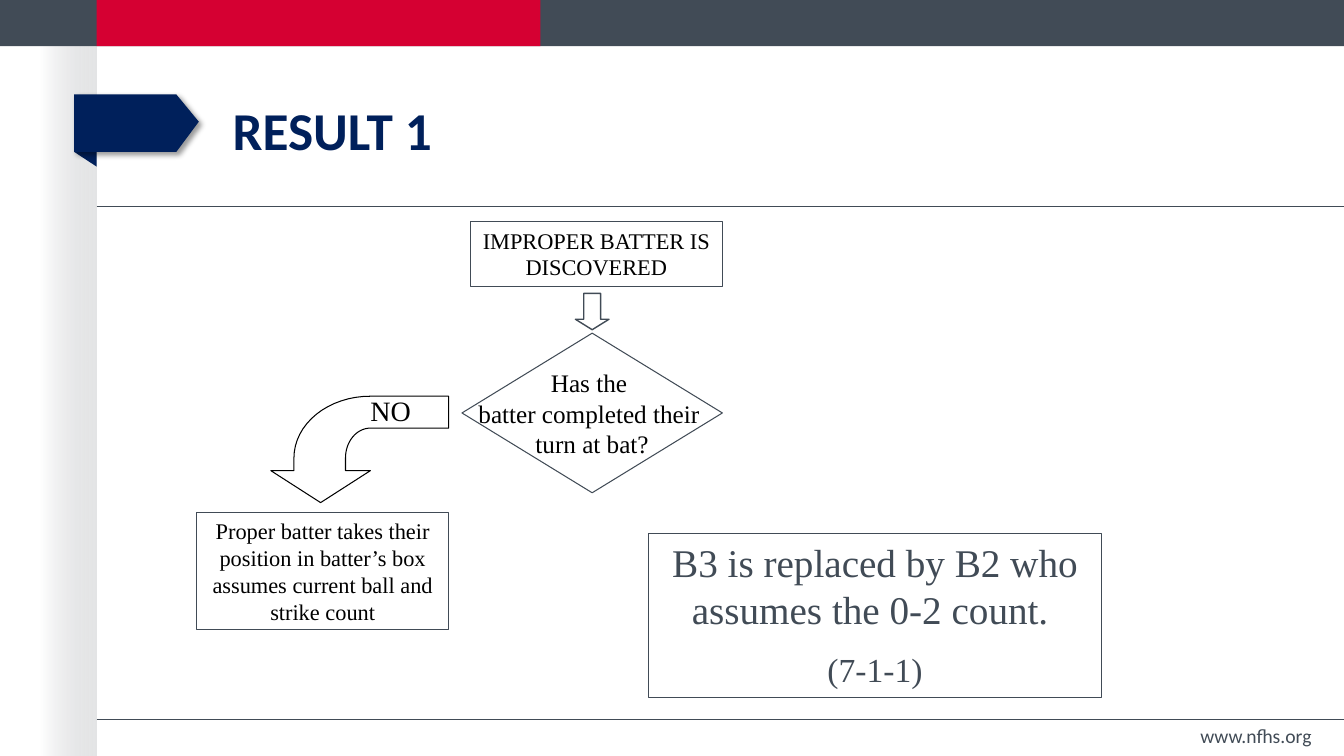
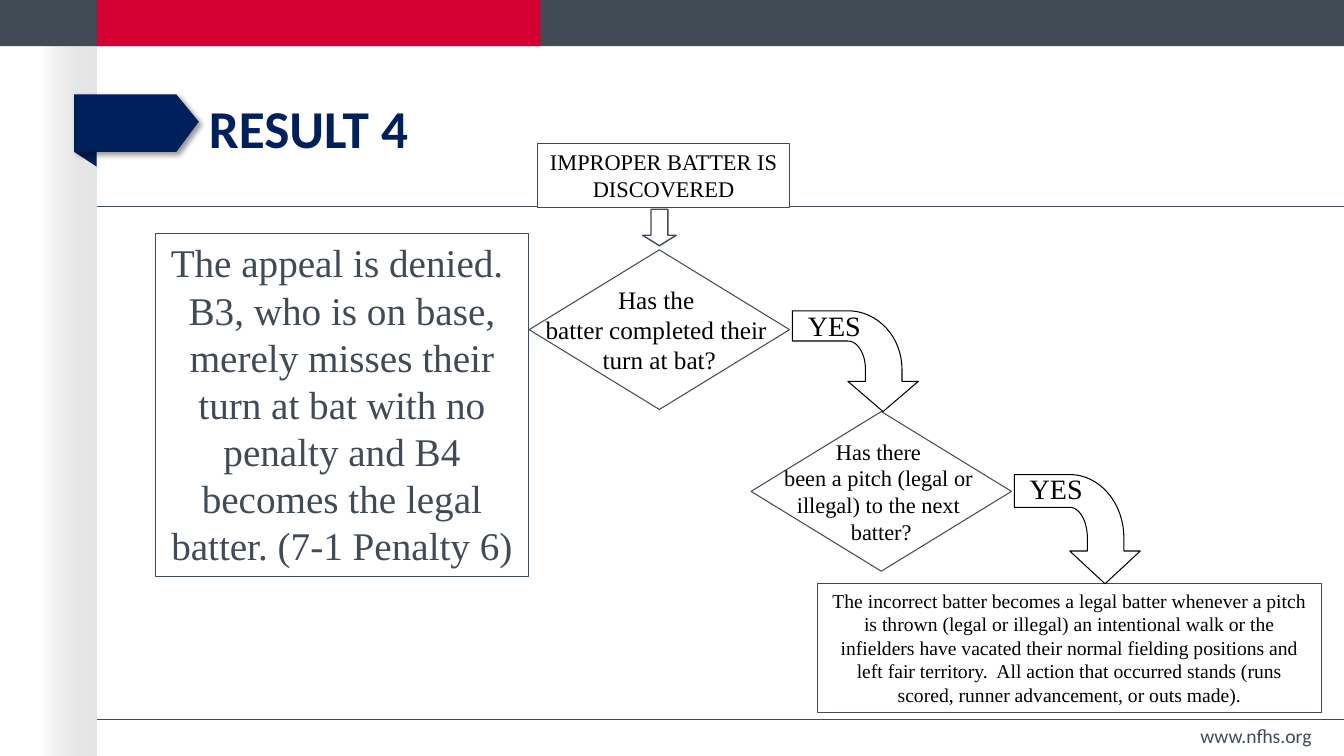
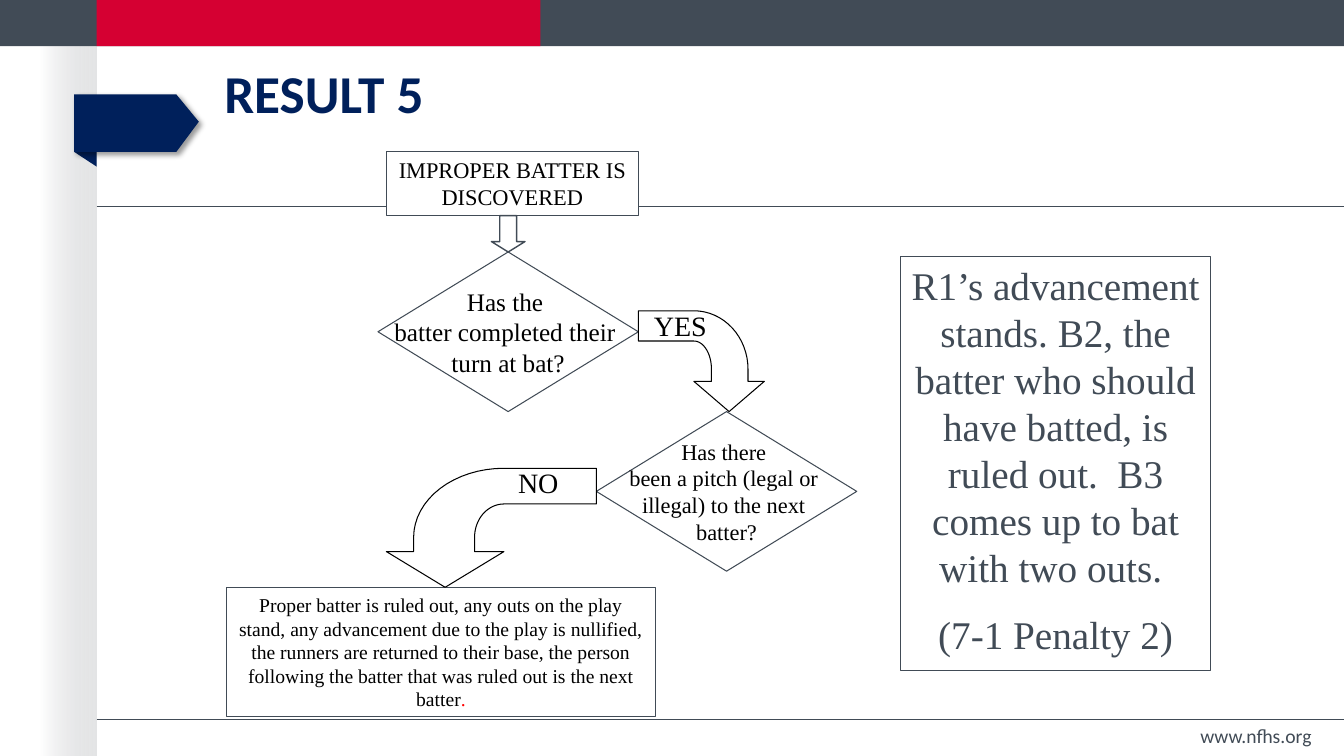
"""Build three slides that walk through batting-out-of-order results."""
import dataclasses
import math

import lxml.etree
import pptx
import pptx.dml.color
import pptx.enum.dml
import pptx.enum.shapes
import pptx.enum.text
import pptx.oxml.ns
import pptx.util

Pt = pptx.util.Pt
qn = pptx.oxml.ns.qn
RGB = pptx.dml.color.RGBColor.from_string
Preset = pptx.enum.shapes.MSO_SHAPE
Align = pptx.enum.text.PP_ALIGN
Anchor = pptx.enum.text.MSO_ANCHOR


@dataclasses.dataclass(frozen=True)
class Theme:
    slate: str = "414B56"
    red: str = "D50032"
    navy: str = "00205B"
    white: str = "FFFFFF"
    black: str = "000000"
    alert: str = "FF0000"
    fade: tuple = ("C8C9CC", "E4E5E6")
    heading_font: str = "Calibri"
    body_font: str = "Times New Roman"
    title: int = 38
    ruling: int = 28
    citation: int = 24
    answer: int = 20
    question: int = 18
    step: int = 16
    detail: int = 14


THEME = Theme()


def lines(size, color, *texts):
    return [[(text, size, color)] for text in texts]


class Deck:
    def __init__(self, theme):
        self.theme = theme
        self.presentation = pptx.Presentation()
        self.presentation.slide_width = Pt(960)
        self.presentation.slide_height = Pt(540)
        self.layout = self.presentation.slide_layouts[5]
        self.slide = None

    def paint(self, shape, fill=None, line=None, width=0.75):
        shape.shadow.inherit = False
        if fill:
            shape.fill.solid()
            shape.fill.fore_color.rgb = RGB(fill)
        if line:
            shape.line.color.rgb = RGB(line)
            shape.line.width = Pt(width)
        else:
            shape.line.fill.background()
        return shape

    def set_text(self, shape, paragraphs, align=Align.CENTER, anchor=Anchor.TOP,
                 wrap=True, font=None, bold=False):
        frame = shape.text_frame
        frame.auto_size = pptx.enum.text.MSO_AUTO_SIZE.NONE
        frame.word_wrap = wrap
        frame.vertical_anchor = anchor
        for index, runs in enumerate(paragraphs):
            paragraph = frame.add_paragraph() if index else frame.paragraphs[0]
            paragraph.alignment = align
            for text, size, color in runs:
                run = paragraph.add_run()
                run.text = text
                run.font.name = font or self.theme.body_font
                run.font.size = Pt(size)
                run.font.bold = bold
                run.font.color.rgb = RGB(color)
        return frame

    def preset(self, kind, left, top, width, height, fill=None, line=None, weight=0.75):
        shape = self.slide.shapes.add_shape(kind, Pt(left), Pt(top), Pt(width), Pt(height))
        return self.paint(shape, fill, line, weight)

    def outline(self, points, fill, line=None):
        start, *rest = [(Pt(x), Pt(y)) for x, y in points]
        builder = self.slide.shapes.build_freeform(*start, scale=1.0)
        builder.add_line_segments(rest, close=True)
        return self.paint(builder.convert_to_shape(), fill, line)

    def rule(self, top):
        connector = self.slide.shapes.add_connector(
            pptx.enum.shapes.MSO_CONNECTOR.STRAIGHT, Pt(69), Pt(top), Pt(960), Pt(top))
        connector.line.color.rgb = RGB(self.theme.slate)
        connector.line.width = Pt(1)
        lxml.etree.SubElement(connector.element.spPr, qn("a:effectLst"))

    def side_fade(self):
        strip = self.preset(Preset.RECTANGLE, 29, 33, 40, 507)
        strip.fill.gradient()
        strip.fill.gradient_angle = 0
        for stop, color in zip(strip.fill.gradient_stops, self.theme.fade):
            stop.color.rgb = RGB(color)
        clear = next(strip.element.iter(qn("a:srgbClr")))
        lxml.etree.SubElement(clear, qn("a:alpha"), val="0")

    def ribbon(self):
        self.outline([(53, 108.5), (69, 108.5), (69, 119)], self.theme.navy)
        tab = self.outline([(53, 67.5), (126, 67.5), (142, 87), (126, 108.5), (53, 108.5)],
                           self.theme.navy)
        effects = tab.element.spPr.find(qn("a:effectLst"))
        shadow = lxml.etree.SubElement(
            effects, qn("a:outerShdw"), blurRad=str(Pt(4)), dist=str(Pt(3)),
            dir="2700000", algn="tl", rotWithShape="0")
        tint = lxml.etree.SubElement(shadow, qn("a:srgbClr"), val=self.theme.black)
        lxml.etree.SubElement(tint, qn("a:alpha"), val="40000")

    def frame(self):
        for placeholder in list(self.layout.placeholders):
            if placeholder.placeholder_format.idx:
                self.layout.shapes.element.remove(placeholder.element)
        self.side_fade()
        self.preset(Preset.RECTANGLE, 0, 0, 960, 33, self.theme.slate)
        self.preset(Preset.RECTANGLE, 69, 0, 317, 33, self.theme.red)
        self.rule(147.6)
        self.rule(514)
        self.ribbon()
        for shape in list(self.slide.shapes):
            if not shape.is_placeholder:
                self.layout.shapes.element.append(shape.element)

    def new_slide(self, title, left, top):
        first = self.slide is None
        self.slide = self.presentation.slides.add_slide(self.layout)
        if first:
            self.frame()
        heading = self.slide.shapes.title
        heading.left, heading.top, heading.width, heading.height = map(Pt, (left, top, 790, 77))
        frame = self.set_text(heading, lines(self.theme.title, self.theme.navy, title),
                              Align.LEFT, Anchor.MIDDLE, font=self.theme.heading_font,
                              bold=True)
        frame.paragraphs[0].line_spacing = Pt(self.theme.title)
        address = self.slide.shapes.add_textbox(Pt(787), Pt(514), Pt(157), Pt(23))
        self.set_text(address, lines(self.theme.detail, self.theme.slate, "www.nfhs.org"),
                      Align.RIGHT, Anchor.MIDDLE, font=self.theme.heading_font)

    def box(self, left, top, width, height, paragraphs):
        panel = self.preset(Preset.RECTANGLE, left, top, width, height,
                            self.theme.white, self.theme.slate)
        frame = self.set_text(panel, paragraphs)
        for paragraph, runs in list(zip(frame.paragraphs, paragraphs))[1:]:
            paragraph.space_before = Pt(runs[0][1] / 2)

    def decision(self, left, top, size, *texts):
        diamond = self.preset(Preset.FLOWCHART_DECISION, left, top, 186, 114,
                              self.theme.white, self.theme.slate)
        self.set_text(diamond, lines(size, self.theme.black, *texts),
                      anchor=Anchor.MIDDLE, wrap=False)

    def discovery(self, left, top, arrow_top, question_top):
        self.box(left, top, 180, 46,
                 lines(self.theme.step, self.theme.black, "IMPROPER BATTER IS DISCOVERED"))
        self.decision(left - 6, question_top, self.theme.question,
                      "Has the ", "batter completed their ", "turn at bat?")
        arrow = self.preset(Preset.DOWN_ARROW, left + 75, arrow_top, 24, 26,
                            self.theme.white, self.theme.slate, 1)
        arrow.adjustments[0], arrow.adjustments[1] = 0.5, 0.31

    def pitch_question(self, left, top):
        self.decision(left, top, self.theme.step, "Has there ", "been a pitch (legal or ",
                      "illegal) to the next ", "batter?")

    def curved_arrow(self, answer, tail, top, width, height, answer_offset):
        """Draw a bent arrow from its tail; a negative width bends it to the left."""
        def arc(radius_x, radius_y):
            angles = [math.pi / 2 * step / 16 for step in range(17)]
            return [(0.44 + radius_x * math.sin(a), 0.58 - radius_y * math.cos(a))
                    for a in angles]

        outer = arc(0.43, 0.58)
        inner = arc(0.14, 0.28)[::-1]
        unit = [(0, 0), *outer, (0.87, 0.7), (1, 0.7), (0.72, 1), (0.44, 0.7),
                (0.58, 0.7), *inner, (0, 0.3)]
        self.outline([(tail + x * width, top + y * height) for x, y in unit],
                     self.theme.white, self.theme.black)
        label = self.slide.shapes.add_textbox(
            Pt(tail + answer_offset - 26), Pt(top - 5.5), Pt(52), Pt(32))
        self.set_text(label, lines(self.theme.answer, self.theme.black, answer), wrap=False)

    def yes(self, tail, top, height):
        self.curved_arrow("YES", tail, top, 90, height, 30)

    def no(self, tail, top, width, height):
        self.curved_arrow("NO", tail, top, -width, height, -41.5)


def result_1(deck, theme):
    deck.new_slide("RESULT 1", 159, 57.6)
    deck.discovery(336, 158.4, 209.5, 238)
    deck.box(140.5, 366, 180, 84, lines(
        theme.step, theme.black,
        "Proper batter takes their position in batter’s box assumes current ball and "
        "strike count"))
    deck.no(320.5, 283, 127, 76)
    deck.box(463, 381, 324, 117.5, [
        [("B3 is replaced by B2 who assumes the 0-2 count. ", theme.ruling, theme.slate)],
        [("(7-1-1)", theme.citation, theme.slate)]])


def result_4(deck, theme):
    deck.new_slide("RESULT 4", 142, 56)
    deck.discovery(384, 102.5, 149.5, 178.5)
    deck.box(584, 417, 360, 92, lines(
        theme.detail, theme.black,
        "The incorrect batter becomes a legal batter whenever a pitch is thrown (legal or "
        "illegal) an intentional walk or the infielders have vacated their normal fielding "
        "positions and left fair territory.  All action that occurred stands (runs scored, "
        "runner advancement, or outs made)."))
    deck.pitch_question(536.5, 294)
    deck.yes(566, 222, 72)
    deck.yes(724.5, 339, 78)
    deck.box(111, 167, 266.5, 245, lines(
        theme.ruling, theme.slate,
        "The appeal is denied.  B3, who is on base, merely misses their turn at bat with "
        "no penalty and B4 becomes the legal batter. (7-1 Penalty 6)"))


def result_5(deck, theme):
    deck.new_slide("RESULT 5", 153, 31.5)
    deck.discovery(276, 108, 154, 180)
    deck.box(162, 420, 306, 92, [[
        ("Proper batter is ruled out, any outs on the play stand, any advancement due to "
         "the play is nullified, the runners are returned to their base, the person "
         "following the batter that was ruled out is the next batter",
         theme.detail, theme.black),
        (".", theme.detail, theme.alert)]])
    deck.pitch_question(426, 294)
    deck.no(426, 334.5, 150, 85)
    deck.yes(456, 222, 72)
    deck.box(643, 183, 222, 296, lines(
        theme.ruling, theme.slate,
        "R1’s advancement stands. B2, the batter who should have batted, is ruled out.  "
        "B3 comes up to bat with two outs. ",
        "(7-1 Penalty 2)"))


def main():
    deck = Deck(THEME)
    for build in (result_1, result_4, result_5):
        build(deck, THEME)
    deck.presentation.save("out.pptx")


if __name__ == "__main__":
    main()
